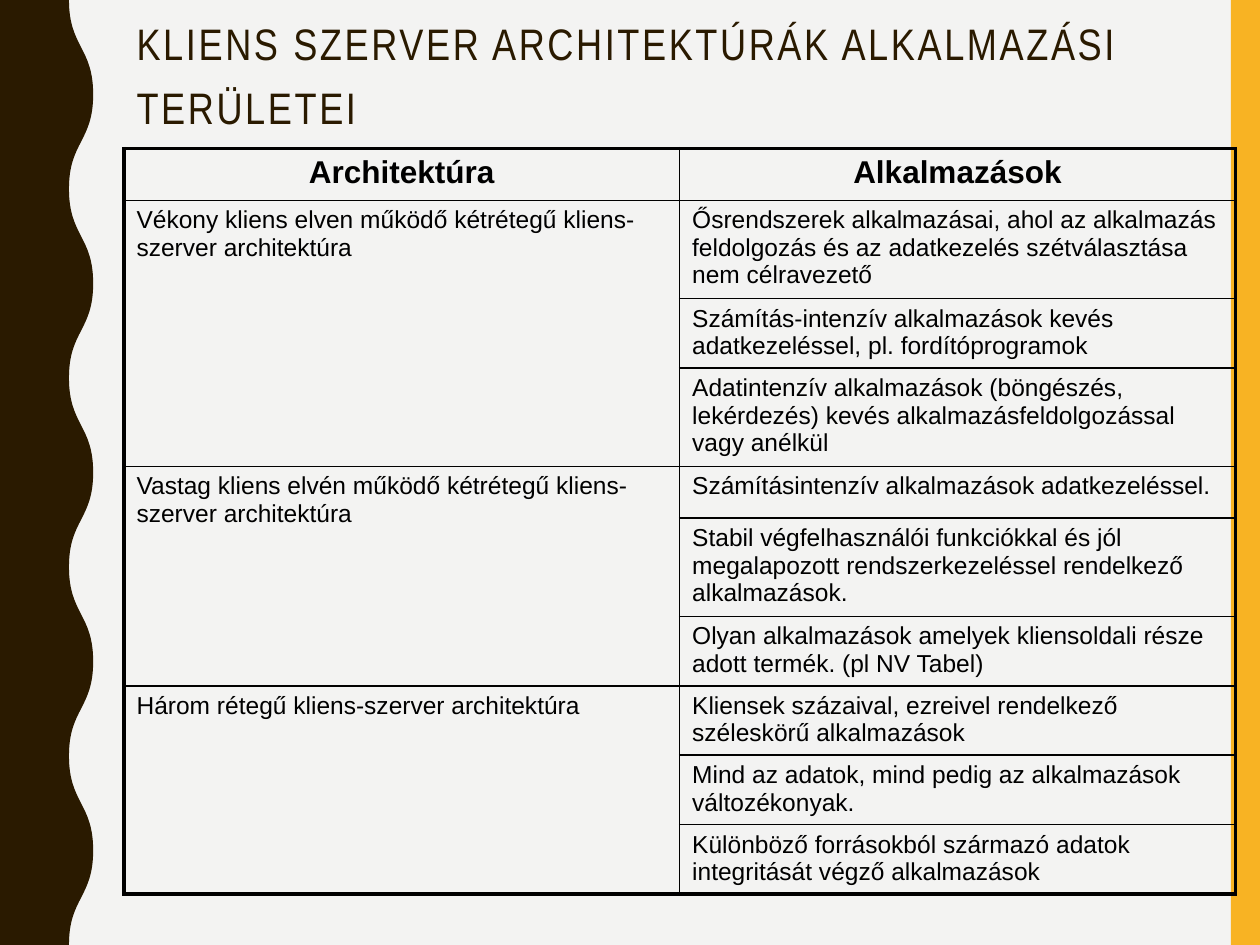
import dataclasses

import lxml.etree
import pptx
import pptx.dml.color
import pptx.enum.shapes
import pptx.enum.text
import pptx.oxml.ns
import pptx.util


@dataclasses.dataclass(frozen=True)
class Theme:
    """Colours, fonts and point sizes of the slide."""
    paper: str = "F3F3F2"
    dark: str = "2A1A00"
    accent: str = "F8B323"
    ink: str = "000000"
    title_font: str = "Arial Narrow"
    table_font: str = "Arial"
    title_size: float = 25.2
    title_end_size: float = 36
    title_tracking: int = 150
    header_size: float = 18
    cell_size: float = 14
    inner_line: float = 1
    outer_line: float = 2.25


@dataclasses.dataclass(frozen=True)
class Box:
    """A region in EMU."""
    left: int
    top: int
    width: int
    height: int

    def percent(self, left, top, width, height):
        """Return the part of this box given by percentages of its size."""
        return Box(self.left + round(left * self.width / 100),
                   self.top + round(top * self.height / 100),
                   round(width * self.width / 100), round(height * self.height / 100))

    def place(self):
        """Return the arguments that position a shape."""
        return self.left, self.top, self.width, self.height


THEME = Theme()
TITLE = "KLIENS SZERVER ARCHITEKTÚRÁK ALKALMAZÁSI TERÜLETEI"
HEADERS = ("Architektúra", "Alkalmazások")
HEADER_HEIGHT = 0.41
LINE_HEIGHTS = {1: 0.41, 2: 0.55, 3: 0.78}
ARCHITECTURES = [
    ("Vékony kliens elven működő kétrétegű kliens-szerver architektúra", [
        (3, "Ősrendszerek alkalmazásai, ahol az alkalmazás feldolgozás és az "
            "adatkezelés szétválasztása nem célravezető"),
        (2, "Számítás-intenzív alkalmazások kevés adatkezeléssel, pl. fordítóprogramok"),
        (3, "Adatintenzív alkalmazások (böngészés, lekérdezés) kevés "
            "alkalmazásfeldolgozással vagy anélkül"),
    ]),
    ("Vastag kliens elvén működő kétrétegű kliens-szerver architektúra", [
        (1, "Számításintenzív alkalmazások adatkezeléssel."),
        (3, "Stabil végfelhasználói funkciókkal és jól megalapozott "
            "rendszerkezeléssel rendelkező alkalmazások."),
        (2, "Olyan alkalmazások amelyek kliensoldali része adott termék. (pl NV Tabel)"),
    ]),
    ("Három rétegű kliens-szerver architektúra", [
        (2, "Kliensek százaival, ezreivel rendelkező széleskörű alkalmazások"),
        (2, "Mind az adatok, mind pedig az alkalmazások változékonyak."),
        (2, "Különböző forrásokból származó adatok integritását végző alkalmazások"),
    ]),
]


def rgb(colour):
    """Return a colour object for a hex string."""
    return pptx.dml.color.RGBColor.from_string(colour)


def paint(shape, colour):
    """Give a shape a flat fill with no line or shadow."""
    shape.shadow.inherit = False
    shape.fill.solid()
    shape.fill.fore_color.rgb = rgb(colour)
    shape.line.fill.background()


def add_run(paragraph, text, font, size, colour, bold=False):
    """Add one formatted run and return it."""
    run = paragraph.add_run()
    run.text = text
    run.font.name = font
    run.font.size = pptx.util.Pt(size)
    run.font.bold = bold
    run.font.color.rgb = rgb(colour)
    return run


def add_accent_bar(slide, box):
    """Draw the coloured bar that fills the box."""
    bar = slide.shapes.add_shape(pptx.enum.shapes.MSO_SHAPE.RECTANGLE, *box.place())
    paint(bar, THEME.accent)


def bend(segment, start, end):
    """Turn a straight segment into an S-curve with upright ends."""
    middle = (start[1] + end[1]) // 2
    segment.tag = pptx.oxml.ns.qn("a:cubicBezTo")
    segment.clear()
    for x, y in ((start[0], middle), (end[0], middle), end):
        lxml.etree.SubElement(segment, pptx.oxml.ns.qn("a:pt"), x=str(x), y=str(y))


def add_wave(slide, box, trough=0.74, half_waves=10):
    """Draw a band whose right edge swings between the trough share and the box edge."""
    edge = [(round(box.width * (1 if index % 2 else trough)),
             round(box.height * index / half_waves)) for index in range(half_waves + 1)]
    builder = slide.shapes.build_freeform(0, 0)
    builder.add_line_segments(edge + [(0, box.height)], close=True)
    wave = builder.convert_to_shape(box.left, box.top)
    segments = list(wave._element.iter(pptx.oxml.ns.qn("a:lnTo")))
    for segment, start, end in zip(segments[1:], edge, edge[1:]):
        bend(segment, start, end)
    paint(wave, THEME.dark)


def add_title(slide, box):
    """Move the title placeholder into the box and fill it."""
    title = slide.shapes.title
    title.left, title.top, title.width, title.height = box.place()
    frame = title.text_frame
    frame.word_wrap = True
    frame.auto_size = pptx.enum.text.MSO_AUTO_SIZE.NONE
    frame.vertical_anchor = pptx.enum.text.MSO_ANCHOR.TOP
    paragraph = frame.paragraphs[0]
    paragraph.alignment = pptx.enum.text.PP_ALIGN.LEFT
    paragraph.line_spacing = 0.9
    for text, size in ((TITLE, THEME.title_size), (" ", THEME.title_end_size)):
        run = add_run(paragraph, text, THEME.title_font, size, THEME.dark)
        run.font._element.set("spc", str(THEME.title_tracking))


def set_borders(cell, outer_sides):
    """Rule all four sides of a cell, heavier on the outer ones."""
    properties = cell._tc.get_or_add_tcPr()
    for index, side in enumerate("LRTB"):
        width = THEME.outer_line if side in outer_sides else THEME.inner_line
        line = lxml.etree.Element(pptx.oxml.ns.qn("a:ln" + side), w=str(pptx.util.Pt(width)))
        fill = lxml.etree.SubElement(line, pptx.oxml.ns.qn("a:solidFill"))
        lxml.etree.SubElement(fill, pptx.oxml.ns.qn("a:srgbClr"), val=THEME.ink)
        properties.insert(index, line)


def fill_cell(cell, text, header=False):
    """Write the text of a header or body cell."""
    paragraph = cell.text_frame.paragraphs[0]
    align = pptx.enum.text.PP_ALIGN
    paragraph.alignment = align.CENTER if header else align.LEFT
    size = THEME.header_size if header else THEME.cell_size
    add_run(paragraph, text, THEME.table_font, size, THEME.ink, header)


def add_architecture_table(slide, box):
    """Place the table with one merged block for each architecture."""
    applications = [entry for _, entries in ARCHITECTURES for entry in entries]
    heights = [HEADER_HEIGHT] + [LINE_HEIGHTS[lines] for lines, _ in applications]
    last = len(heights) - 1
    table = slide.shapes.add_table(len(heights), len(HEADERS), *box.place()).table
    table.first_row = table.horz_banding = False
    for column in table.columns:
        column.width = box.width // len(HEADERS)
    for row, height in zip(table.rows, heights):
        row.height = round(box.height * height / sum(heights))
    for column, header in enumerate(HEADERS):
        fill_cell(table.cell(0, column), header, header=True)
    for row, (_, application) in enumerate(applications, start=1):
        fill_cell(table.cell(row, 1), application)
    first = 1
    for architecture, entries in ARCHITECTURES:
        end = first + len(entries) - 1
        table.cell(first, 0).merge(table.cell(end, 0))
        fill_cell(table.cell(first, 0), architecture)
        first = end + 1
    for row in range(len(heights)):
        for column, side in enumerate("LR"):
            cell = table.cell(row, column)
            cell.fill.background()
            bottom = row + (cell.span_height if cell.is_merge_origin else 1) - 1
            set_borders(cell, side + ("T" if row == 0 else "") + ("B" if bottom == last else ""))


def main():
    """Build the slide and save it."""
    deck = pptx.Presentation()
    deck.slide_width = pptx.util.Inches(10)
    deck.slide_height = pptx.util.Inches(7.5)
    page = Box(0, 0, deck.slide_width, deck.slide_height)
    slide = deck.slides.add_slide(deck.slide_layouts[5])
    slide.background.fill.solid()
    slide.background.fill.fore_color.rgb = rgb(THEME.paper)
    add_accent_bar(slide, page.percent(97.7, 0, 2.3, 100))
    add_wave(slide, page.percent(0, 0, 7.4, 100))
    add_title(slide, page.percent(9.84, 1.7, 88.2, 8.4))
    add_architecture_table(slide, page.percent(9.84, 15.72, 88.2, 78.9))
    deck.save("out.pptx")


if __name__ == "__main__":
    main()
